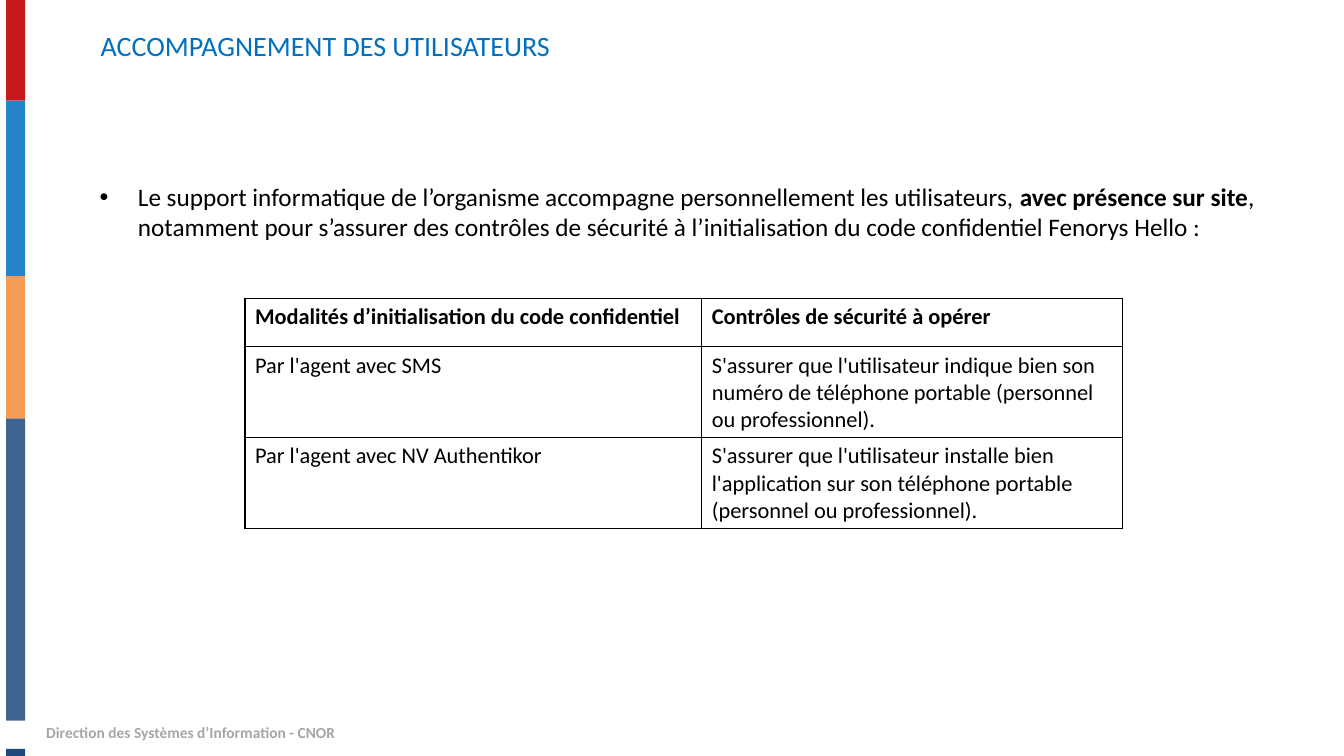
from typing import NamedTuple

from lxml import etree
from pptx import Presentation
from pptx import util as u
from pptx.dml.color import RGBColor
from pptx.enum import shapes, text
from pptx.oxml import ns

PX = u.Inches(1) // 100
FONT = "Calibri"
COLORS = {
    "navy": "1F497D",
    "red": "C00000",
    "blue": "0070C0",
    "orange": "F68D36",
    "gray": "A6A6A6",
    "black": "000000",
}


class Bar(NamedTuple):
    top: int
    height: int
    color: str
    alpha: int


class Run(NamedTuple):
    words: str
    bold: bool = False


class Label(NamedTuple):
    left: int
    top: int
    width: int
    height: int
    size: int
    color: str
    runs: list[Run]
    middle: bool = False
    bullet: bool = False


BARS = [
    Bar(415, 300, "navy", 85),
    Bar(0, 100, "red", 90),
    Bar(100, 174, "blue", 85),
    Bar(274, 141, "orange", 85),
    Bar(743, 7, "navy", 100),
]
LABELS = [
    Label(36, 712, 321, 29, 11, "gray",
          [Run("Direction des Systèmes d’Information - CNOR", True)]),
    Label(90, 9, 1175, 71, 20, "blue",
          [Run("ACCOMPAGNEMENT DES UTILISATEURS")], middle=True),
    Label(89, 175, 1176, 470, 18, "black", [
        Run("Le support informatique de l’organisme accompagne "
            "personnellement les utilisateurs, "),
        Run("avec présence sur site", True),
        Run(", notamment pour s’assurer des contrôles de sécurité à "
            "l’initialisation du code confidentiel Fenorys Hello :"),
    ], bullet=True),
]
COLS = [453, 417]
ROWS = [48, 90, 90]
CELLS = [
    ["Modalités d’initialisation du code confidentiel",
     "Contrôles de sécurité à opérer"],
    ["Par l'agent avec SMS",
     "S'assurer que l'utilisateur indique bien son numéro de téléphone "
     "portable (personnel ou professionnel)."],
    ["Par l'agent avec NV Authentikor",
     "S'assurer que l'utilisateur installe bien l'application sur son "
     "téléphone portable (personnel ou professionnel)."],
]


def rgb(name: str) -> RGBColor:
    return RGBColor.from_string(COLORS[name])


def style(font, size: int, color: str, bold: bool) -> None:
    font.name = FONT
    font.size = u.Pt(size)
    font.bold = bold
    font.color.rgb = rgb(color)


def draw_bar(slide, bar: Bar) -> None:
    shape = slide.shapes.add_shape(
        shapes.MSO_SHAPE.RECTANGLE, 6 * PX, bar.top * PX, 19 * PX, bar.height * PX)
    shape.shadow.inherit = False
    shape.line.fill.background()
    shape.fill.solid()
    shape.fill.fore_color.rgb = rgb(bar.color)
    if bar.alpha < 100:
        tone = shape.fill._xPr.find(".//" + ns.qn("a:srgbClr"))
        etree.SubElement(tone, ns.qn("a:alpha"), val=str(bar.alpha * 1000))


def draw_label(slide, label: Label) -> None:
    box = slide.shapes.add_textbox(
        label.left * PX, label.top * PX, label.width * PX, label.height * PX)
    frame = box.text_frame
    frame.word_wrap = True
    if label.middle:
        frame.vertical_anchor = text.MSO_ANCHOR.MIDDLE
    para = frame.paragraphs[0]
    if label.bullet:
        props = para._p.get_or_add_pPr()
        props.set("marL", str(38 * PX))
        props.set("indent", str(-38 * PX))
        etree.SubElement(props, ns.qn("a:buFont"), typeface="Arial")
        etree.SubElement(props, ns.qn("a:buChar"), char="•")
    for item in label.runs:
        run = para.add_run()
        run.text = item.words
        style(run.font, label.size, label.color, item.bold)


def add_edges(cell) -> None:
    props = cell._tc.get_or_add_tcPr()
    for spot, side in enumerate("LRTB"):
        line = etree.Element(ns.qn(f"a:ln{side}"), w=str(u.Pt(1)))
        fill = etree.SubElement(line, ns.qn("a:solidFill"))
        etree.SubElement(fill, ns.qn("a:srgbClr"), val=COLORS["black"])
        props.insert(spot, line)


def draw_table(slide) -> None:
    table = slide.shapes.add_table(
        len(ROWS), len(COLS), 243 * PX, 296 * PX, sum(COLS) * PX, sum(ROWS) * PX).table
    table.first_row = table.horz_banding = False
    for col, width in zip(table.columns, COLS):
        col.width = width * PX
    for row, height in zip(table.rows, ROWS):
        row.height = height * PX
    for r, line in enumerate(CELLS):
        for c, words in enumerate(line):
            cell = table.cell(r, c)
            cell.fill.background()
            add_edges(cell)
            cell.text_frame.text = words
            para = cell.text_frame.paragraphs[0]
            if r and not c:
                para.alignment = text.PP_ALIGN.JUSTIFY
            style(para.runs[0].font, 16, "black", r == 0)


def main() -> None:
    deck = Presentation()
    deck.slide_width = 1333 * PX
    deck.slide_height = 750 * PX
    slide = deck.slides.add_slide(deck.slide_layouts[6])
    for bar in BARS:
        draw_bar(slide, bar)
    for label in LABELS:
        draw_label(slide, label)
    draw_table(slide)
    deck.save("out.pptx")


if __name__ == "__main__":
    main()
